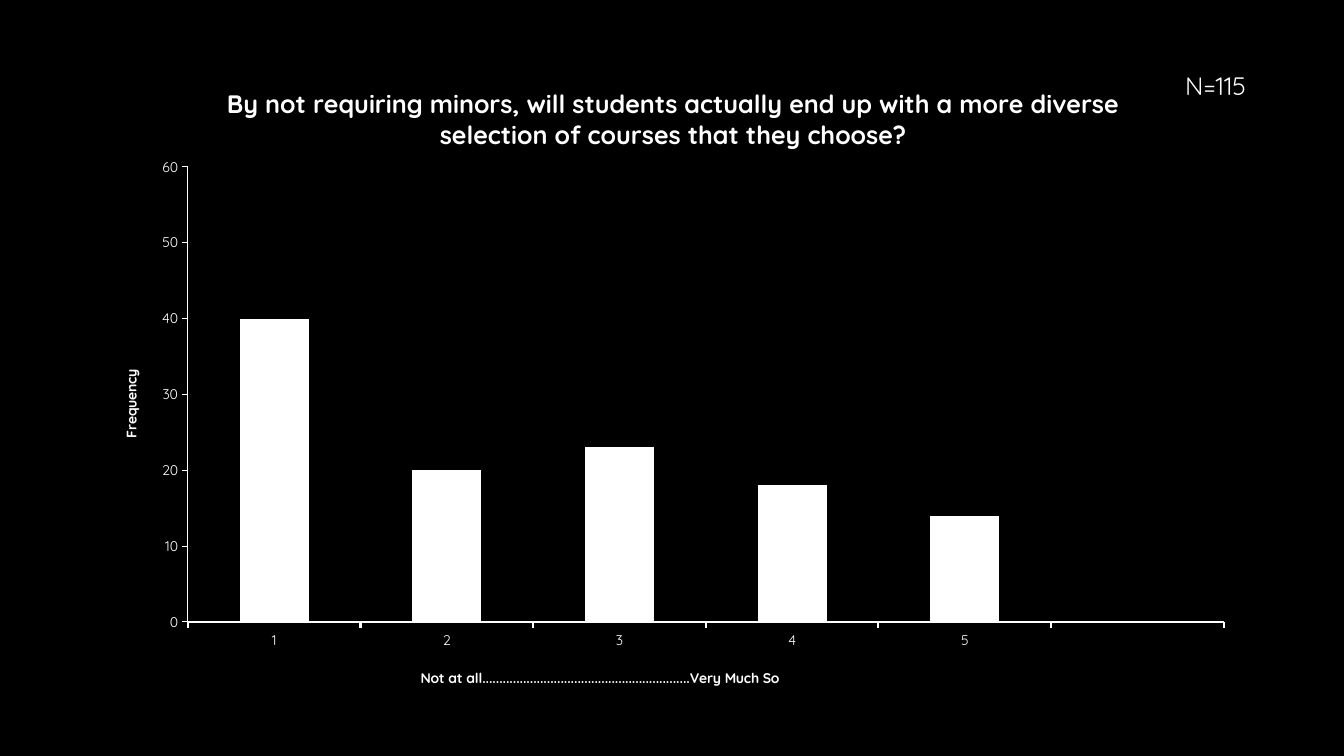
"""Build a slide with a column chart of survey answers on the diversity of courses."""
import pptx
import pptx.chart.data
import pptx.dml.color
import pptx.enum.chart
import pptx.enum.text
import pptx.oxml
import pptx.oxml.ns
import pptx.util

Pt = pptx.util.Pt
WHITE = pptx.dml.color.RGBColor(0xFF, 0xFF, 0xFF)
BLACK = pptx.dml.color.RGBColor(0, 0, 0)
FONT = "Quicksand"


def place(node, x, y, size=None):
    """Pin a chart part at a fraction of the chart area."""
    tag = pptx.oxml.ns.qn
    for old in node.findall(tag("c:layout")):
        node.remove(old)
    inner = '<c:layoutTarget val="inner"/>' if size else ""
    extent = f'<c:w val="{size[0]}"/><c:h val="{size[1]}"/>' if size else ""
    layout = pptx.oxml.parse_xml(
        f'<c:layout {pptx.oxml.ns.nsdecls("c")}><c:manualLayout>{inner}'
        '<c:xMode val="edge"/><c:yMode val="edge"/>'
        f'<c:x val="{x}"/><c:y val="{y}"/>{extent}</c:manualLayout></c:layout>')
    text = node.find(tag("c:tx"))
    node.insert(0 if text is None else 1, layout)


def write(frame, text, size, bold):
    """Add one white run to a text frame."""
    run = frame.paragraphs[0].add_run()
    run.text = text
    run.font.name = FONT
    run.font.size = Pt(size)
    run.font.bold = bold
    run.font.color.rgb = WHITE


deck = pptx.Presentation()
deck.slide_width = Pt(960)
deck.slide_height = Pt(540)
slide = deck.slides.add_slide(deck.slide_layouts[6])
slide.background.fill.solid()
slide.background.fill.fore_color.rgb = BLACK

data = pptx.chart.data.CategoryChartData()
data.categories = ["1", "2", "3", "4", "5", ""]
data.add_series("Series 1", [40, 20, 23, 18, 14, None])
kind = pptx.enum.chart.XL_CHART_TYPE.COLUMN_CLUSTERED
chart = slide.shapes.add_chart(
    kind, Pt(68.4), Pt(38.9), Pt(822.2), Pt(464.4), data).chart
chart.has_legend = False
chart.font.name = FONT
chart.font.size = Pt(10)
chart.font.color.rgb = WHITE

plot = chart.plots[0]
plot.gap_width = 150
plot.vary_by_categories = False
bars = plot.series[0].format
bars.fill.solid()
bars.fill.fore_color.rgb = WHITE
bars.line.fill.background()

chart.value_axis.minimum_scale = 0
chart.value_axis.maximum_scale = 60
chart.value_axis.major_unit = 10

chart.has_title = True
titles = [
    (chart.chart_title, "By not requiring minors, will students actually end up "
     "with a more diverse selection of courses that they choose?", 18, 0.11, 0.04),
    (chart.category_axis.axis_title, "Not at all" + "." * 61 + "Very Much So",
     10, 0.28, 0.94),
    (chart.value_axis.axis_title, "Frequency", 10, 0.02, 0.48),
]
for title, text, size, x, y in titles:
    write(title.text_frame, text, size, True)
    place(title.element, x, y)

for axis, width in ((chart.category_axis, 1.5), (chart.value_axis, 0.75)):
    axis.has_major_gridlines = False
    axis.major_tick_mark = pptx.enum.chart.XL_TICK_MARK.OUTSIDE
    axis.minor_tick_mark = pptx.enum.chart.XL_TICK_MARK.NONE
    axis.format.line.color.rgb = WHITE
    axis.format.line.width = Pt(width)

area = chart.element.find(".//" + pptx.oxml.ns.qn("c:plotArea"))
place(area, 0.08, 0.173, (0.9, 0.7))

count = slide.shapes.add_textbox(Pt(839.5), Pt(46.8), Pt(69.1), Pt(28.8)).text_frame
count.word_wrap = False
count.auto_size = pptx.enum.text.MSO_AUTO_SIZE.SHAPE_TO_FIT_TEXT
write(count, "N=115", 18, False)

deck.save("out.pptx")
